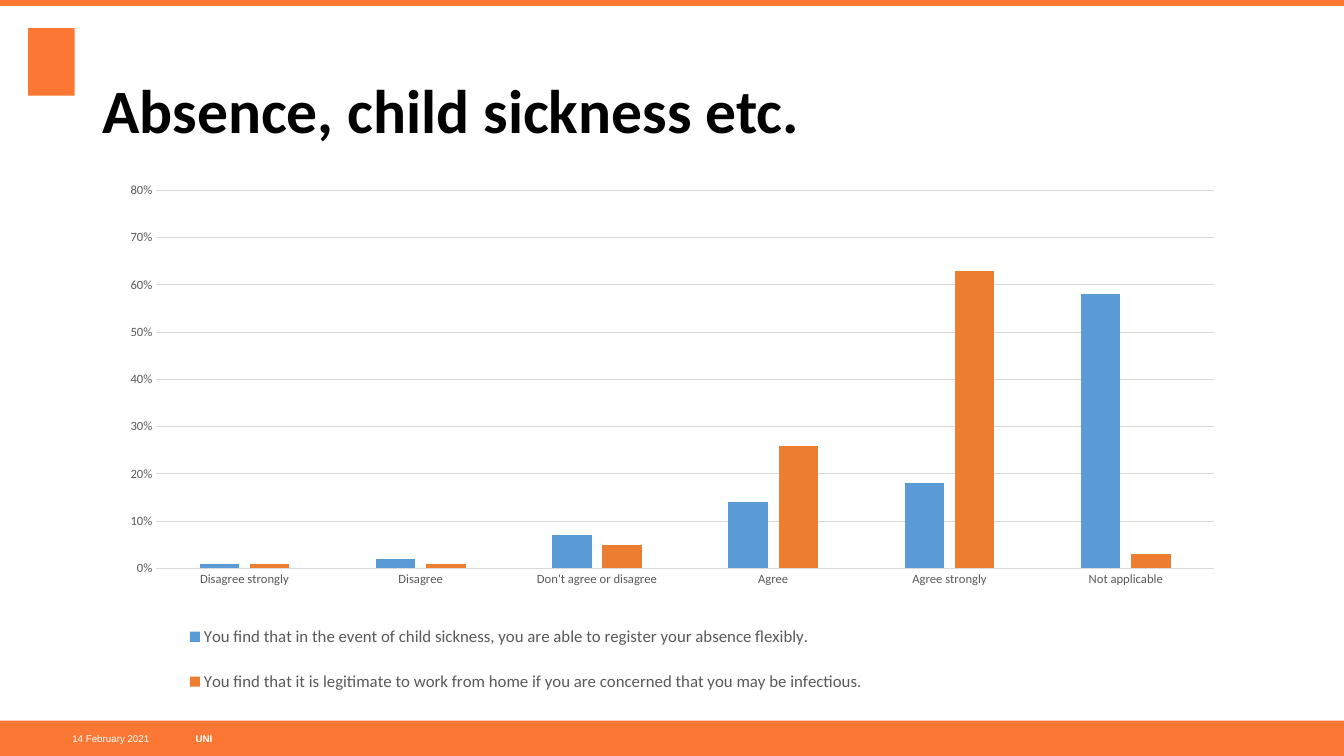
from typing import NamedTuple

from lxml.etree import SubElement
from pptx import Presentation
from pptx.chart.data import CategoryChartData
from pptx.dml.color import RGBColor
from pptx.enum.chart import XL_CHART_TYPE, XL_LEGEND_POSITION, XL_TICK_MARK
from pptx.enum.shapes import MSO_SHAPE
from pptx.enum.text import MSO_ANCHOR, PP_ALIGN
from pptx.oxml.ns import qn
from pptx.util import Emu, Pt

EMU_PER_PX = 9144  # 100 px to the inch

BRAND_ORANGE = RGBColor(0xFC, 0x76, 0x34)
WHITE = RGBColor(0xFF, 0xFF, 0xFF)
BLACK = RGBColor(0x00, 0x00, 0x00)
LABEL_GREY = RGBColor(0x59, 0x59, 0x59)
LINE_GREY = RGBColor(0xD9, 0xD9, 0xD9)
SERIES_BLUE = RGBColor(0x5B, 0x9B, 0xD5)
SERIES_ORANGE = RGBColor(0xED, 0x7D, 0x31)


class Box(NamedTuple):
    left: int
    top: int
    width: int
    height: int

    def emu(self) -> list[Emu]:
        return [Emu(length * EMU_PER_PX) for length in self]


class Label(NamedTuple):
    text: str
    box: Box
    font: dict
    color: RGBColor
    inset: Box = Box(0, 0, 0, 0)
    alignment: PP_ALIGN = PP_ALIGN.LEFT
    line_spacing: float = 1.0


class Series(NamedTuple):
    name: str
    values: tuple
    color: RGBColor


LOGO_BLOCK = Box(28, 28, 46, 67)
FOOTER_BAND = Box(0, 715, 1333, 35)
TOP_BAND = Box(0, 0, 1333, 6)
CHART_BOX = Box(113, 174, 1107, 528)
# Both are measured from the corner of the chart.
PLOT_BOX = Box(42, 15, 1049, 375)
LEGEND_BOX = Box(66, 443, 686, 74)

FOOTER_FONT = {"name": "Arial", "size": Pt(7), "bold": False}
TITLE_FONT = {"name": "Calibri", "size": Pt(44), "bold": True}

LABELS = [
    Label("UNI", Box(194, 715, 372, 35), FOOTER_FONT | {"bold": True}, WHITE),
    Label("14 February 2021", Box(27, 715, 121, 35), FOOTER_FONT, WHITE,
          alignment=PP_ALIGN.RIGHT),
    Label("Absence, child sickness etc.", Box(92, 40, 1150, 145), TITLE_FONT,
          BLACK, inset=Box(10, 5, 10, 5), line_spacing=0.9),
]

CATEGORIES = ["Disagree strongly", "Disagree", "Don't agree or disagree",
              "Agree", "Agree strongly", "Not applicable"]
# The line break in the first name sets the two legend entries apart.
SERIES = [
    Series("You find that in the event of child sickness, you are able to "
           "register your absence flexibly.\n",
           (0.01, 0.02, 0.07, 0.14, 0.18, 0.58), SERIES_BLUE),
    Series("You find that it is legitimate to work from home if you are "
           "concerned that you may be infectious.",
           (0.01, 0.01, 0.05, 0.26, 0.63, 0.03), SERIES_ORANGE),
]


def set_format(target, values: dict) -> None:
    for name, value in values.items():
        setattr(target, name, value)


def set_font(font, values: dict, color: RGBColor) -> None:
    set_format(font, values)
    font.color.rgb = color


def add_block(slide, box: Box) -> None:
    shape = slide.shapes.add_shape(MSO_SHAPE.RECTANGLE, *box.emu())
    shape.shadow.inherit = False
    shape.fill.solid()
    shape.fill.fore_color.rgb = BRAND_ORANGE
    shape.line.fill.background()


def add_label(slide, label: Label) -> None:
    frame = slide.shapes.add_textbox(*label.box.emu()).text_frame
    sides = ("margin_left", "margin_top", "margin_right", "margin_bottom")
    set_format(frame, dict(zip(sides, label.inset.emu())))
    set_format(frame, {"word_wrap": True, "vertical_anchor": MSO_ANCHOR.MIDDLE})
    paragraph = frame.paragraphs[0]
    set_format(paragraph, {"alignment": label.alignment,
                           "line_spacing": label.line_spacing})
    run = paragraph.add_run()
    run.text = label.text
    set_font(run.font, label.font, label.color)


def place_chart_part(element, box: Box, position: int, target: dict) -> None:
    """Give a chart part a manual layout, as the child at the given position."""
    for layout in element.findall(qn("c:layout")):
        element.remove(layout)
    layout = SubElement(element, qn("c:layout"))
    element.insert(position, layout)
    manual = SubElement(layout, qn("c:manualLayout"))
    chart_size = (CHART_BOX.width, CHART_BOX.height) * 2
    fractions = [length / whole for length, whole in zip(box, chart_size)]
    settings = target | {"xMode": "edge", "yMode": "edge"} | dict(zip("xywh", fractions))
    for name, value in settings.items():
        SubElement(manual, qn(f"c:{name}")).set("val", str(value))


def style_axis(axis) -> None:
    set_format(axis, {"major_tick_mark": XL_TICK_MARK.NONE,
                      "minor_tick_mark": XL_TICK_MARK.NONE})
    set_font(axis.tick_labels.font, {"name": "Calibri", "size": Pt(9)}, LABEL_GREY)


def style_line(line) -> None:
    line.color.rgb = LINE_GREY
    line.width = Pt(0.75)


def add_absence_chart(slide) -> None:
    data = CategoryChartData(number_format="0%")
    data.categories = CATEGORIES
    for series in SERIES:
        data.add_series(series.name, series.values)
    chart = slide.shapes.add_chart(
        XL_CHART_TYPE.COLUMN_CLUSTERED, *CHART_BOX.emu(), data).chart
    set_format(chart, {"has_title": False, "has_legend": True})
    set_font(chart.font, {"name": "Calibri", "size": Pt(10)}, BLACK)

    plot = chart.plots[0]
    set_format(plot, {"gap_width": 219, "overlap": -27, "vary_by_categories": False})
    for columns, series in zip(plot.series, SERIES):
        columns.invert_if_negative = False
        columns.format.fill.solid()
        columns.format.fill.fore_color.rgb = series.color

    style_axis(chart.category_axis)
    style_line(chart.category_axis.format.line)
    value_axis = chart.value_axis
    style_axis(value_axis)
    set_format(value_axis, {"minimum_scale": 0, "maximum_scale": 0.8,
                            "major_unit": 0.1, "has_major_gridlines": True})
    set_format(value_axis.tick_labels, {"number_format": "0%",
                                        "number_format_is_linked": False})
    value_axis.format.line.fill.background()
    style_line(value_axis.major_gridlines.format.line)

    set_format(chart.legend, {"position": XL_LEGEND_POSITION.BOTTOM,
                              "include_in_layout": False})
    set_font(chart.legend.font, {"name": "Calibri", "size": Pt(12)}, LABEL_GREY)
    chart_element = chart.element.find(qn("c:chart"))
    place_chart_part(chart_element.find(qn("c:legend")), LEGEND_BOX, 1, {})
    place_chart_part(chart_element.find(qn("c:plotArea")), PLOT_BOX, 0,
                     {"layoutTarget": "inner"})


def main() -> None:
    presentation = Presentation()
    presentation.slide_width = Emu(1333 * EMU_PER_PX)
    presentation.slide_height = Emu(750 * EMU_PER_PX)
    slide = presentation.slides.add_slide(presentation.slide_layouts[6])
    for box in (LOGO_BLOCK, FOOTER_BAND, TOP_BAND):
        add_block(slide, box)
    for label in LABELS:
        add_label(slide, label)
    add_absence_chart(slide)
    presentation.save("out.pptx")


if __name__ == "__main__":
    main()
